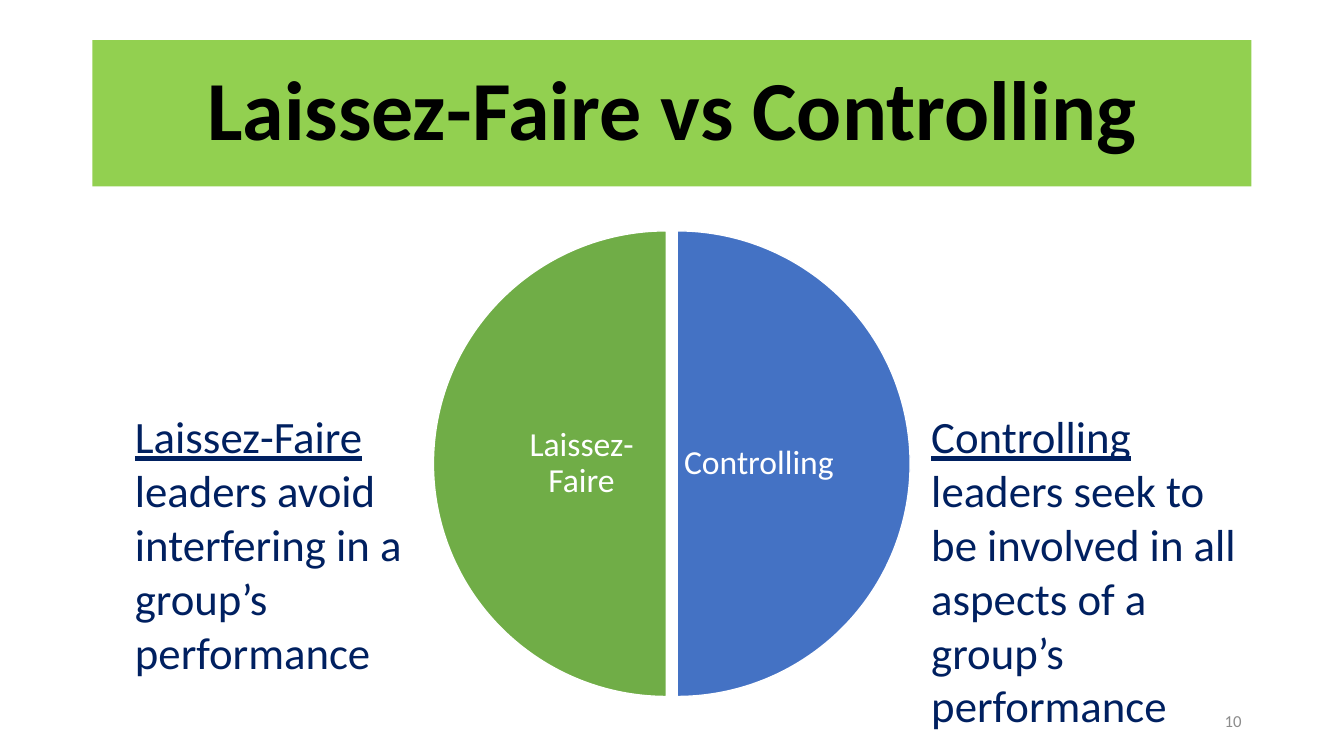
from dataclasses import dataclass

from pptx import Presentation
from pptx.dml.color import RGBColor
from pptx.enum.shapes import MSO_SHAPE
from pptx.enum.text import MSO_ANCHOR as Anchor, PP_ALIGN as Align
from pptx.shapes.autoshape import Shape
from pptx.slide import Slide
from pptx.util import Pt

BLACK = RGBColor(0x00, 0x00, 0x00)
WHITE = RGBColor(0xFF, 0xFF, 0xFF)
NAVY = RGBColor(0x00, 0x20, 0x60)
GRAY = RGBColor(0x8C, 0x8C, 0x8C)
LIME = RGBColor(0x92, 0xD0, 0x50)
GREEN = RGBColor(0x70, 0xAD, 0x47)
BLUE = RGBColor(0x44, 0x72, 0xC4)

FONT = "Calibri"
PIE_TOP = 164.9
PIE_SIZE = 332.6
LABEL_WIDTH = 116.6
LABEL_HEIGHT = 233.3
UP_ANGLE = 162
DOWN_ANGLE = 54


@dataclass(frozen=True)
class Style:
    name: str
    description: str
    color: RGBColor
    pie_left: float
    start_angle: float
    end_angle: float
    label_left: float
    text_left: float
    text_width: float
    text_height: float


STYLES = [
    Style("Controlling", " leaders seek to be involved in all aspects of a group’s performance",
          BLUE, 317.5, UP_ANGLE, DOWN_ANGLE, 483.8, 658.1, 236.2, 239.8),
    Style("Laissez-Faire", " leaders avoid interfering in a group’s performance",
          GREEN, 309.6, DOWN_ANGLE, UP_ANGLE, 357.1, 89.3, 210.2, 200.9),
]


def add_text(slide: Slide, text: str, left: float, top: float, width: float, height: float, *,
             size: float, color: RGBColor, underlined: str = "", bold: bool = False,
             align: Align = Align.LEFT, anchor: Anchor = Anchor.TOP,
             line_spacing: float = 1.0, inset: float | None = None) -> Shape:
    shape = slide.shapes.add_textbox(Pt(left), Pt(top), Pt(width), Pt(height))
    frame = shape.text_frame
    frame.word_wrap = True
    frame.vertical_anchor = anchor
    if inset is not None:
        frame.margin_left = frame.margin_right = Pt(inset)
        frame.margin_top = frame.margin_bottom = Pt(inset)
    paragraph = frame.paragraphs[0]
    paragraph.alignment = align
    paragraph.line_spacing = line_spacing
    for content, underline in ((underlined, True), (text, False)):
        if content:
            run = paragraph.add_run()
            run.text = content
            font = run.font
            font.name, font.size, font.bold = FONT, Pt(size), bold
            font.underline = underline
            font.color.rgb = color
    return shape


def add_half(slide: Slide, style: Style) -> None:
    pie = slide.shapes.add_shape(MSO_SHAPE.PIE, Pt(style.pie_left), Pt(PIE_TOP),
                                 Pt(PIE_SIZE), Pt(PIE_SIZE))
    pie.adjustments[0] = style.start_angle
    pie.adjustments[1] = style.end_angle
    pie.shadow.inherit = False
    pie.fill.solid()
    pie.fill.fore_color.rgb = style.color
    pie.line.color.rgb = WHITE
    pie.line.width = Pt(1)
    add_text(slide, style.name, style.label_left, PIE_TOP + (PIE_SIZE - LABEL_HEIGHT) / 2,
             LABEL_WIDTH, LABEL_HEIGHT, size=24, color=WHITE, align=Align.CENTER,
             anchor=Anchor.MIDDLE, line_spacing=0.9, inset=2.4)


def add_description(slide: Slide, style: Style) -> None:
    add_text(slide, style.description, style.text_left, 288.7, style.text_width,
             style.text_height, size=32, color=NAVY, underlined=style.name)


def main() -> None:
    presentation = Presentation()
    presentation.slide_width = Pt(960)
    presentation.slide_height = Pt(540)
    slide = presentation.slides.add_slide(presentation.slide_layouts[6])

    title = add_text(slide, "Laissez-Faire vs Controlling", 66, 28.75, 828, 104.4,
                     size=60, color=BLACK, bold=True, align=Align.CENTER,
                     anchor=Anchor.MIDDLE, line_spacing=0.9)
    title.fill.solid()
    title.fill.fore_color.rgb = LIME

    for style in STYLES:
        add_half(slide, style)
    for style in STYLES:
        add_description(slide, style)

    add_text(slide, "10", 678, 500.5, 216, 28.75, size=12, color=GRAY,
             align=Align.RIGHT, anchor=Anchor.MIDDLE)
    presentation.save("out.pptx")


if __name__ == "__main__":
    main()
